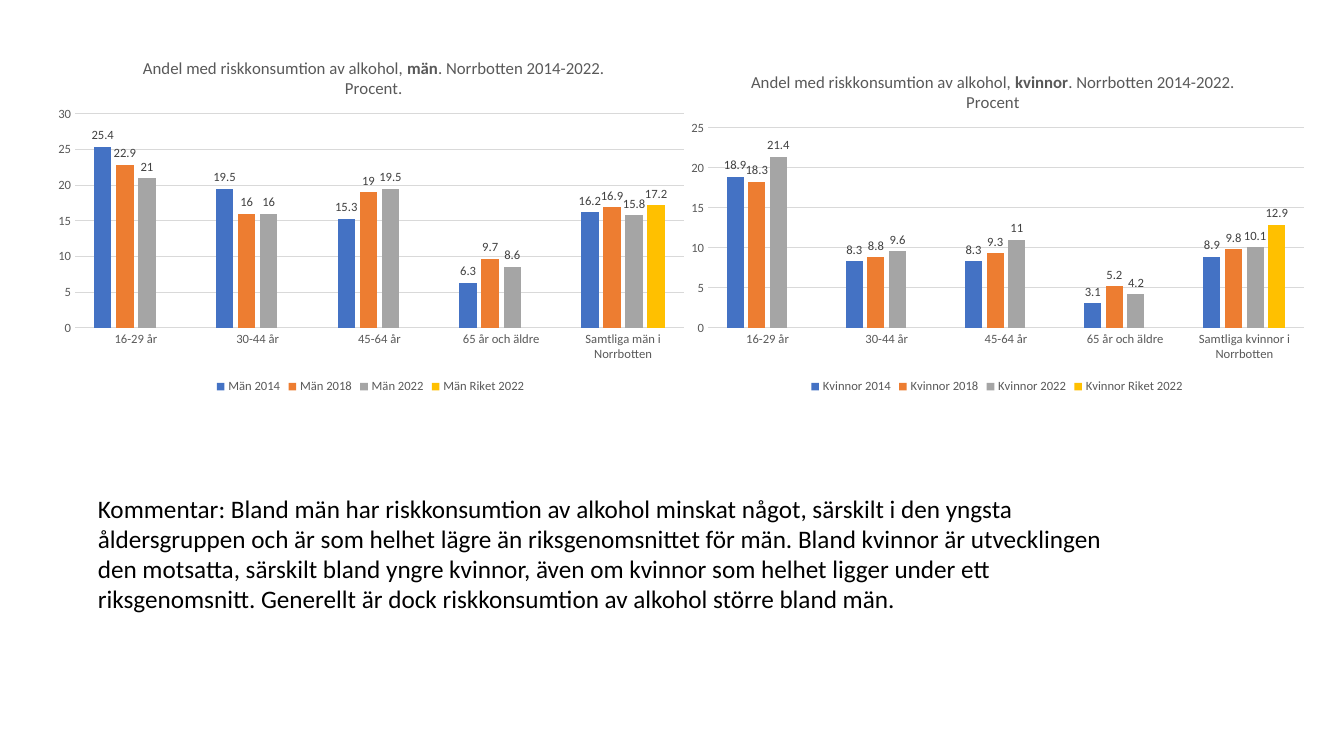
from dataclasses import dataclass

from lxml import etree
from pptx import Presentation
from pptx.chart.data import CategoryChartData
from pptx.dml.color import RGBColor
from pptx.enum.chart import XL_CHART_TYPE, XL_LABEL_POSITION, XL_LEGEND_POSITION, XL_TICK_MARK
from pptx.util import Pt

COLUMN = XL_CHART_TYPE.COLUMN_CLUSTERED
ABOVE = XL_LABEL_POSITION.OUTSIDE_END
BOTTOM = XL_LEGEND_POSITION.BOTTOM
NONE = XL_TICK_MARK.NONE
NS = "http://schemas.openxmlformats.org/drawingml/2006/chart"

AGES = ["16-29 år", "30-44 år", "45-64 år", "65 år och äldre"]
YEARS = ["2014", "2018", "2022", "Riket 2022"]
CHARTS = [
    {
        "group": "Män",
        "total": "Samtliga män i Norrbotten",
        "title": [("Andel med riskkonsumtion av alkohol, ", False), ("män", True),
                  (". Norrbotten 2014-2022. Procent.", False)],
        "rows": [
            (25.4, 19.5, 15.3, 6.3, 16.2),
            (22.9, 16, 19, 9.7, 16.9),
            (21, 16, 19.5, 8.6, 15.8),
            (None, None, None, None, 17.2),
        ],
        "top": 30,
        "box": (45, 37, 651, 361),
        "plot": (75, 114, 609, 214),
        "head": (140, 54),
    },
    {
        "group": "Kvinnor",
        "total": "Samtliga kvinnor i Norrbotten",
        "title": [("Andel med riskkonsumtion av alkohol, ", False), ("kvinnor", True),
                  (". Norrbotten 2014-2022. Procent", False)],
        "rows": [
            (18.9, 8.3, 8.3, 3.1, 8.9),
            (18.3, 8.8, 9.3, 5.2, 9.8),
            (21.4, 9.6, 11, 4.2, 10.1),
            (None, None, None, None, 12.9),
        ],
        "top": 25,
        "box": (678, 52, 638, 346),
        "plot": (708, 128, 596, 200),
        "head": (748, 68),
    },
]
COMMENT = (
    "Kommentar: Bland män har riskkonsumtion av alkohol minskat något, särskilt i den yngsta "
    "åldersgruppen och är som helhet lägre än riksgenomsnittet för män. Bland kvinnor är "
    "utvecklingen den motsatta, särskilt bland yngre kvinnor, även om kvinnor som helhet ligger "
    "under ett riksgenomsnitt. Generellt är dock riskkonsumtion av alkohol större bland män."
)
NOTE_BOX = (88, 488, 1038, 132)
WIDTH, HEIGHT = 1344, 756
SCALE = 12192000 / WIDTH


@dataclass(frozen=True)
class Theme:
    face: str = "Calibri"
    bars: tuple = ("4472C4", "ED7D31", "A5A5A5", "FFC000")
    ink: str = "000000"
    gray: str = "595959"
    label: str = "404040"
    grid: str = "D9D9D9"
    small: int = 9
    base: int = 10
    head: int = 12
    body: int = 18


THEME = Theme()


def emu(px):
    return round(px * SCALE)


def paint(font, size, color, bold=False):
    font.name = THEME.face
    font.size = Pt(size)
    font.bold = bold
    font.color.rgb = RGBColor.from_string(color)


def rule(line):
    line.color.rgb = RGBColor.from_string(THEME.grid)
    line.width = Pt(0.75)


def place(owner, after, items):
    for old in owner.findall(f"{{{NS}}}layout"):
        owner.remove(old)
    layout = etree.Element(f"{{{NS}}}layout")
    manual = etree.SubElement(layout, f"{{{NS}}}manualLayout")
    for tag, val in items:
        etree.SubElement(manual, f"{{{NS}}}{tag}").set("val", str(val))
    owner.insert(after, layout)


def share(spot, box):
    return [round((pos - start) / size, 4) for pos, start, size in zip(spot, box, box[2:])]


def add_bars(slide, part):
    data = CategoryChartData()
    data.categories = AGES + [part["total"]]
    for year, row in zip(YEARS, part["rows"]):
        data.add_series(f"{part['group']} {year}", row)
    box = part["box"]
    chart = slide.shapes.add_chart(COLUMN, *map(emu, box), data).chart
    paint(chart.font, THEME.base, THEME.ink)

    chart.has_title = True
    title = chart.chart_title
    line = title.text_frame.paragraphs[0]
    for text, bold in part["title"]:
        run = line.add_run()
        run.text = text
        paint(run.font, THEME.head, THEME.gray, bold)
    title.include_in_layout = False
    x, y = share(part["head"], box)
    place(title._element, 1, [("xMode", "edge"), ("yMode", "edge"), ("x", x), ("y", y)])

    chart.has_legend = True
    chart.legend.position = BOTTOM
    chart.legend.include_in_layout = False
    paint(chart.legend.font, THEME.small, THEME.gray)

    for axis in (chart.category_axis, chart.value_axis):
        axis.major_tick_mark = axis.minor_tick_mark = NONE
        paint(axis.tick_labels.font, THEME.small, THEME.gray)
    rule(chart.category_axis.format.line)
    values = chart.value_axis
    values.minimum_scale, values.maximum_scale, values.major_unit = 0, part["top"], 5
    values.format.line.fill.background()
    rule(values.major_gridlines.format.line)

    plot = chart.plots[0]
    plot.vary_by_categories = False
    plot.gap_width, plot.overlap = 219, -27
    for series, color in zip(plot.series, THEME.bars):
        series.format.fill.solid()
        series.format.fill.fore_color.rgb = RGBColor.from_string(color)
        labels = series.data_labels
        labels.show_value = True
        labels.position = ABOVE
        paint(labels.font, THEME.small, THEME.label)

    x, y = share(part["plot"], box)
    w, h = (round(a / b, 4) for a, b in zip(part["plot"][2:], box[2:]))
    area = chart._chartSpace.find(f".//{{{NS}}}plotArea")
    place(area, 0, [("layoutTarget", "inner"), ("xMode", "edge"), ("yMode", "edge"),
                    ("x", x), ("y", y), ("w", w), ("h", h)])


def add_note(slide):
    frame = slide.shapes.add_textbox(*map(emu, NOTE_BOX)).text_frame
    frame.word_wrap = True
    run = frame.paragraphs[0].add_run()
    run.text = COMMENT
    paint(run.font, THEME.body, THEME.ink)


def main():
    deck = Presentation()
    deck.slide_width, deck.slide_height = emu(WIDTH), emu(HEIGHT)
    slide = deck.slides.add_slide(deck.slide_layouts[6])
    for part in CHARTS:
        add_bars(slide, part)
    add_note(slide)
    deck.save("out.pptx")


if __name__ == "__main__":
    main()
